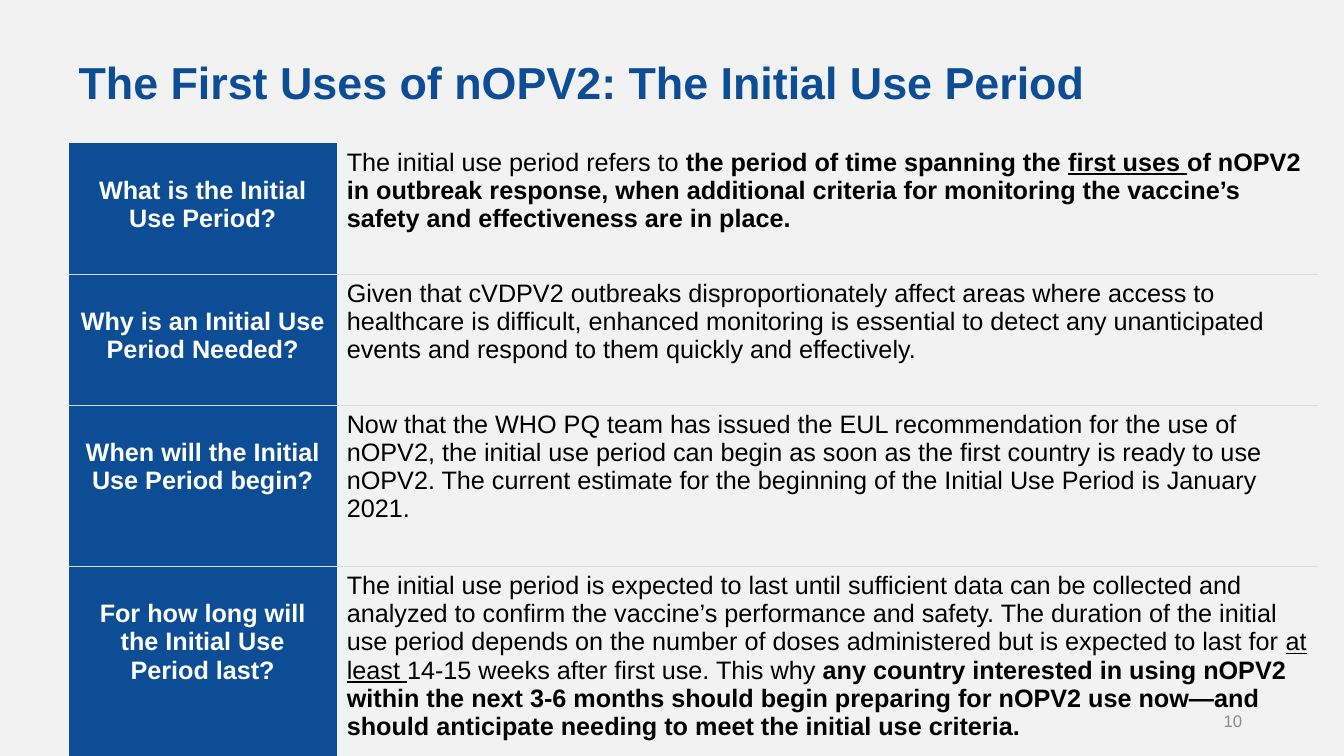
from dataclasses import dataclass

from lxml import etree
from pptx import Presentation
from pptx.dml.color import RGBColor
from pptx.enum.text import MSO_ANCHOR, PP_ALIGN
from pptx.oxml.ns import qn
from pptx.util import Inches, Pt

CENTER = PP_ALIGN.CENTER
LEFT = PP_ALIGN.LEFT
RIGHT = PP_ALIGN.RIGHT
TOP = MSO_ANCHOR.TOP
MIDDLE = MSO_ANCHOR.MIDDLE
TITLE_ONLY = 5


@dataclass(frozen=True)
class Theme:
    font: str = "Arial"
    back: str = "F2F2F2"
    blue: str = "0D4D95"
    white: str = "FFFFFF"
    black: str = "000000"
    gray: str = "8C8C8C"
    rule: str = "D6DCE5"
    title: int = 32
    body: int = 18
    number: int = 12


THEME = Theme()

ROWS = [
    (1.3, "What is the Initial Use Period?", [
        ("The initial use period refers to ", ""),
        ("the period of time spanning the ", "b"),
        ("first uses ", "bu"),
        ("of nOPV2 in outbreak response, when additional criteria for "
         "monitoring the vaccine’s safety and effectiveness are in place.", "b"),
    ]),
    (1.3, "Why is an Initial Use Period Needed?", [
        ("Given that cVDPV2 outbreaks disproportionately affect areas where "
         "access to healthcare is difficult, enhanced monitoring is essential "
         "to detect any unanticipated events and respond to them quickly and "
         "effectively.", ""),
    ]),
    (1.6, "When will the Initial Use Period begin?", [
        ("Now that the WHO PQ team has issued the EUL recommendation for the "
         "use of nOPV2, the initial use period can begin as soon as the first "
         "country is ready to use nOPV2. The current estimate for the "
         "beginning of the Initial Use Period is January 2021.", ""),
    ]),
    (1.88, "For how long will the Initial Use Period last?", [
        ("The initial use period is expected to last until sufficient data "
         "can be collected and analyzed to confirm the vaccine’s performance "
         "and safety. The duration of the initial use period depends on the "
         "number of doses administered but is expected to last for ", ""),
        ("at least ", "u"),
        ("14-15 weeks after first use. This why ", ""),
        ("any country interested in using nOPV2 within the next 3-6 months "
         "should begin preparing for nOPV2 use now—and should anticipate "
         "needing to meet the initial use criteria.", "b"),
    ]),
]


def style(para, size, color, align=LEFT, bold=None):
    para.alignment = align
    font = para.font
    font.name = THEME.font
    font.size = Pt(size)
    font.bold = bold
    font.color.rgb = RGBColor.from_string(color)


def add_title(slide, text):
    title = slide.shapes.title
    title.left, title.top = Inches(0.68), Inches(0.49)
    title.width, title.height = Inches(11.26), Inches(0.64)
    frame = title.text_frame
    frame.text = text
    frame.vertical_anchor = TOP
    frame.word_wrap = True
    style(frame.paragraphs[0], THEME.title, THEME.blue, bold=True)


def add_number(slide, text):
    box = slide.shapes.add_textbox(
        Inches(9.42), Inches(6.95), Inches(3), Inches(0.4))
    frame = box.text_frame
    frame.word_wrap = True
    frame.vertical_anchor = MIDDLE
    frame.text = text
    style(frame.paragraphs[0], THEME.number, THEME.gray, RIGHT)


def set_rules(cell, sides):
    props = cell._tc.get_or_add_tcPr()
    for side in "LRTB":
        line = etree.SubElement(props, qn(f"a:ln{side}"), w=str(Pt(1)))
        if side in sides:
            fill = etree.SubElement(line, qn("a:solidFill"))
            etree.SubElement(fill, qn("a:srgbClr"), val=THEME.rule)
        else:
            etree.SubElement(line, qn("a:noFill"))


def fill_label(cell, text):
    cell.fill.solid()
    cell.fill.fore_color.rgb = RGBColor.from_string(THEME.blue)
    cell.margin_top = Inches(0.33)
    cell.text = text
    style(cell.text_frame.paragraphs[0], THEME.body, THEME.white, CENTER, True)


def fill_answer(cell, parts):
    cell.fill.background()
    para = cell.text_frame.paragraphs[0]
    style(para, THEME.body, THEME.black)
    for text, marks in parts:
        run = para.add_run()
        run.text = text
        run.font.bold = "b" in marks
        run.font.underline = "u" in marks


def add_grid(slide, rows):
    total = sum(height for height, _, _ in rows)
    table = slide.shapes.add_table(
        len(rows), 2, Inches(0.68), Inches(1.42),
        Inches(12.39), Inches(total)).table
    table.first_row = False
    table.horz_banding = False
    for column, width in zip(table.columns, (2.66, 9.73)):
        column.width = Inches(width)
    last = len(rows) - 1
    for index, (height, label, parts) in enumerate(rows):
        table.rows[index].height = Inches(height)
        sides = ("T" if index > 0 else "") + ("B" if index < last else "")
        for cell in table.rows[index].cells:
            set_rules(cell, sides)
        fill_label(table.cell(index, 0), label)
        fill_answer(table.cell(index, 1), parts)


def main():
    deck = Presentation()
    deck.slide_width, deck.slide_height = Inches(13.33), Inches(7.5)
    slide = deck.slides.add_slide(deck.slide_layouts[TITLE_ONLY])
    back = slide.background.fill
    back.solid()
    back.fore_color.rgb = RGBColor.from_string(THEME.back)
    add_number(slide, "10")
    add_title(slide, "The First Uses of nOPV2: The Initial Use Period")
    add_grid(slide, ROWS)
    deck.save("out.pptx")


if __name__ == "__main__":
    main()
